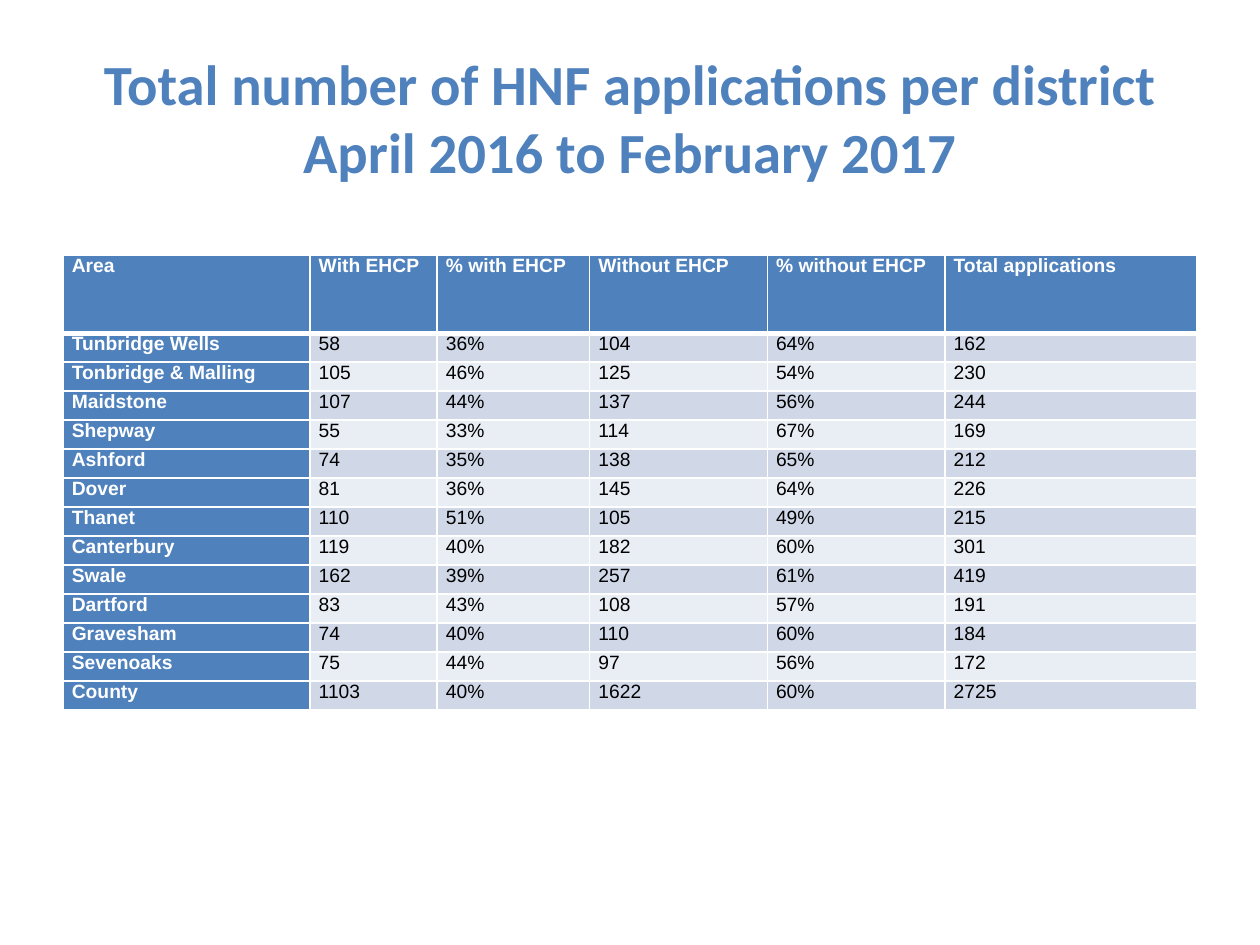
import pptx
import pptx.dml.color
import pptx.enum.text
import pptx.oxml
import pptx.oxml.ns
import pptx.util

TITLE = ("Total number of HNF applications per district",
         "April 2016 to February 2017")
HEADS = ("Area", "With EHCP", "% with EHCP", "Without EHCP",
         "% without EHCP", "Total applications")
AREAS = (
    ("Tunbridge Wells", 58, "36%", 104, "64%", 162),
    ("Tonbridge & Malling", 105, "46%", 125, "54%", 230),
    ("Maidstone", 107, "44%", 137, "56%", 244),
    ("Shepway", 55, "33%", 114, "67%", 169),
    ("Ashford", 74, "35%", 138, "65%", 212),
    ("Dover", 81, "36%", 145, "64%", 226),
    ("Thanet", 110, "51%", 105, "49%", 215),
    ("Canterbury", 119, "40%", 182, "60%", 301),
    ("Swale", 162, "39%", 257, "61%", 419),
    ("Dartford", 83, "43%", 108, "57%", 191),
    ("Gravesham", 74, "40%", 110, "60%", 184),
    ("Sevenoaks", 75, "44%", 97, "56%", 172),
    ("County", 1103, "40%", 1622, "60%", 2725),
)
BLUE, WHITE, BLACK = "4F81BD", "FFFFFF", "000000"
BANDS = ("E9EDF4", "D0D8E8")
WIDE, HIGH = 10, 7.5
LEFT = 0.05 * WIDE
SPAN = WIDE - 2 * LEFT
COLS = (1.96, 1.01, 1.21, 1.41, 1.41, 2)
HEAD_HIGH, ROW_HIGH = 0.62, 0.23
Inches, Pt = pptx.util.Inches, pptx.util.Pt


def tint(code):
    return pptx.dml.color.RGBColor.from_string(code)


def add_run(para, text, font, size, color, bold):
    run = para.add_run()
    run.text = text
    run.font.name, run.font.size, run.font.bold = font, Pt(size), bold
    run.font.color.rgb = tint(color)


def rule(cell, widths):
    """Draw white borders; widths in points go left, right, top, bottom."""
    props = cell._tc.get_or_add_tcPr()
    for spot, (side, width) in enumerate(zip("LRTB", widths)):
        props.insert(spot, pptx.oxml.parse_xml(
            f'<a:ln{side} {pptx.oxml.ns.nsdecls("a")} w="{Pt(width)}">'
            f'<a:solidFill><a:srgbClr val="{WHITE}"/></a:solidFill>'
            f'</a:ln{side}>'))


def add_title(slide):
    title = slide.shapes.title
    title.left, title.top = Inches(LEFT), Inches(0.04 * HIGH)
    title.width, title.height = Inches(SPAN), Inches(HIGH / 6)
    frame = title.text_frame
    frame.auto_size = pptx.enum.text.MSO_AUTO_SIZE.NONE
    frame.vertical_anchor = pptx.enum.text.MSO_ANCHOR.MIDDLE
    para = frame.paragraphs[0]
    para.alignment = pptx.enum.text.PP_ALIGN.CENTER
    for num, line in enumerate(TITLE):
        if num:
            para.add_line_break()
        add_run(para, line, "Calibri", 32.4, BLUE, True)


def add_grid(slide):
    rows = (HEADS, *AREAS)
    tall = HEAD_HIGH + ROW_HIGH * len(AREAS)
    grid = slide.shapes.add_table(
        len(rows), len(COLS), Inches(LEFT), Inches(0.27 * HIGH),
        Inches(SPAN), Inches(tall)).table
    for col, width in zip(grid.columns, COLS):
        col.width = Inches(width)
    for r, row in enumerate(rows):
        grid.rows[r].height = Inches(ROW_HIGH if r else HEAD_HIGH)
        for c, value in enumerate(row):
            cell = grid.cell(r, c)
            label = r == 0 or c == 0
            cell.margin_left = cell.margin_right = Inches(0.07)
            cell.margin_top = cell.margin_bottom = 0
            cell.fill.solid()
            cell.fill.fore_color.rgb = tint(BLUE if label else BANDS[r % 2])
            rule(cell, (1, 1, 3 if r == 1 else 1, 1 if r else 3))
            add_run(cell.text_frame.paragraphs[0], str(value), "Arial", 11,
                    WHITE if label else BLACK, label)


def main():
    deck = pptx.Presentation()
    deck.slide_width, deck.slide_height = Inches(WIDE), Inches(HIGH)
    slide = deck.slides.add_slide(deck.slide_layouts.get_by_name("Title Only"))
    add_title(slide)
    add_grid(slide)
    deck.save("out.pptx")


if __name__ == "__main__":
    main()
